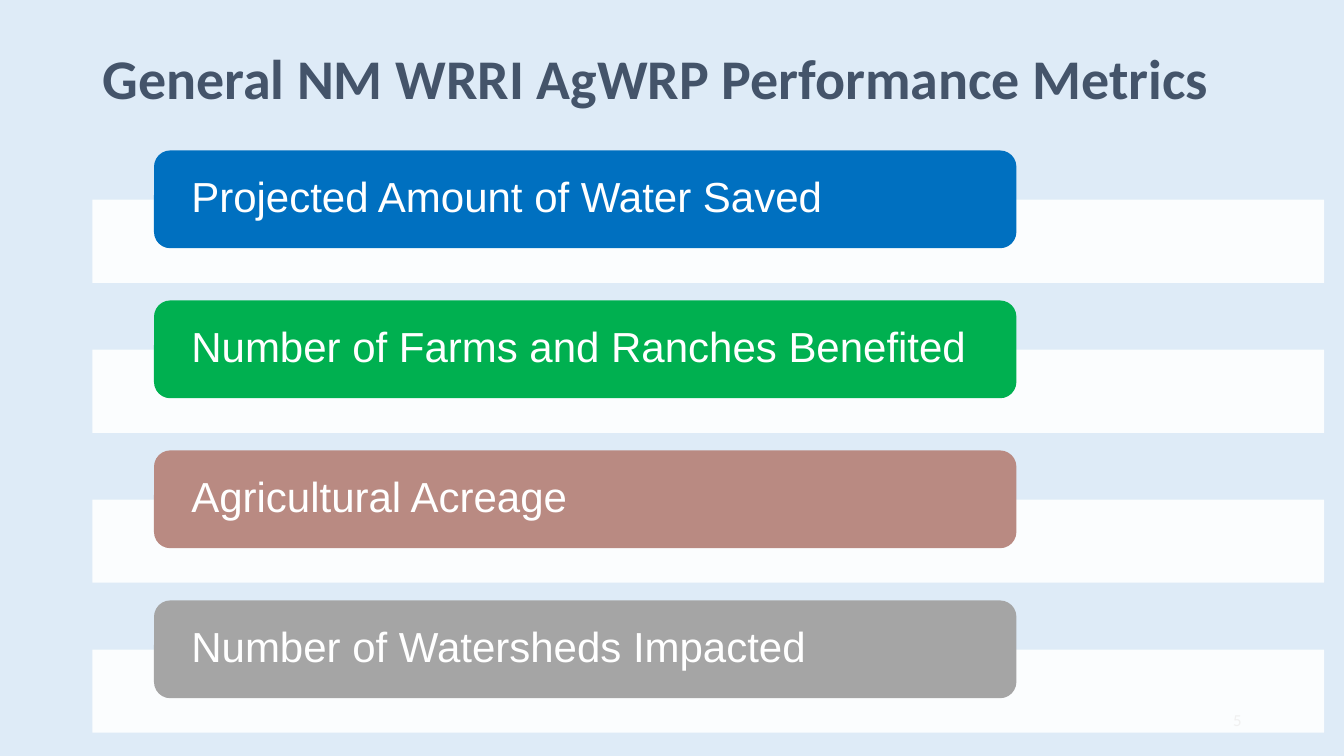
from dataclasses import dataclass

from lxml.etree import SubElement
from pptx import Presentation
from pptx.dml.color import RGBColor
from pptx.enum.shapes import MSO_SHAPE as Preset
from pptx.enum.text import MSO_ANCHOR as Anchor, PP_ALIGN as Align
from pptx.oxml.ns import qn
from pptx.util import Inches, Pt


@dataclass(frozen=True)
class Theme:
    backdrop: str = "DEEBF7"
    heading: str = "44546A"
    white: str = "FFFFFF"
    faint: str = "F0F0F0"
    heading_font: str = "Calibri"
    metric_font: str = "Arial"
    heading_size: int = 40
    metric_size: int = 30
    number_size: int = 12


class MetricsSlide:
    COLUMNS, ROWS = 133.33, 75

    def __init__(self, deck, theme):
        self.theme = theme
        self.column = deck.slide_width / self.COLUMNS
        self.row = deck.slide_height / self.ROWS
        self.slide = deck.slides.add_slide(deck.slide_layouts[6])
        backdrop = self.slide.background.fill
        backdrop.solid()
        backdrop.fore_color.rgb = RGBColor.from_string(theme.backdrop)

    def place(self, left, top, width, height):
        return (round(left * self.column), round(top * self.row),
                round(width * self.column), round(height * self.row))

    def set_words(self, holder, words, color, inset=1, align=Align.LEFT, **font_format):
        frame = holder.text_frame
        side = round(inset * self.column)
        frame_format = {"word_wrap": True, "vertical_anchor": Anchor.MIDDLE,
                        "margin_left": side, "margin_right": side,
                        "margin_top": 0, "margin_bottom": 0}
        for name, value in frame_format.items():
            setattr(frame, name, value)
        line = frame.paragraphs[0]
        line.text = words
        line.alignment = align
        line.line_spacing = 0.9
        for name, value in font_format.items():
            setattr(line.font, name, value)
        line.font.color.rgb = RGBColor.from_string(color)

    def label(self, words, box, color, **text_format):
        holder = self.slide.shapes.add_textbox(*self.place(*box))
        self.set_words(holder, words, color, **text_format)

    def block(self, preset, box, color, opacity=100):
        shape = self.slide.shapes.add_shape(preset, *self.place(*box))
        shape.shadow.inherit = False
        shape.line.fill.background()
        shape.fill.solid()
        shape.fill.fore_color.rgb = RGBColor.from_string(color)
        if opacity < 100:
            tint = next(shape.element.spPr.iter(qn("a:srgbClr")))
            SubElement(tint, qn("a:alpha"), val=str(opacity * 1000))
        return shape

    def metric(self, words, color, top):
        theme = self.theme
        self.block(Preset.RECTANGLE, (9.17, top + 4.87, 122.2, 8.26), theme.white, 90)
        pill = self.block(Preset.ROUNDED_RECTANGLE, (15.28, top, 85.55, 9.7), color)
        self.set_words(pill, words, theme.white, inset=3.23,
                       name=theme.metric_font, size=Pt(theme.metric_size))


def main():
    deck = Presentation()
    deck.slide_width, deck.slide_height = Inches(13.33), Inches(7.5)
    theme = Theme()
    page = MetricsSlide(deck, theme)
    page.label("General NM WRRI AgWRP Performance Metrics", (9.17, 3.7, 115, 8.8),
               theme.heading, name=theme.heading_font,
               size=Pt(theme.heading_size), bold=True)
    metrics = {
        "Projected Amount of Water Saved": "0070C0",
        "Number of Farms and Ranches Benefited": "00B050",
        "Agricultural Acreage": "B98A82",
        "Number of Watersheds Impacted": "A5A5A5",
    }
    first_top, pitch = 14.93, 14.88
    for index, (words, color) in enumerate(metrics.items()):
        page.metric(words, color, first_top + index * pitch)
    page.label("5", (94.17, 69.5, 30, 4), theme.faint, align=Align.RIGHT,
               name=theme.heading_font, size=Pt(theme.number_size))
    deck.save("out.pptx")


if __name__ == "__main__":
    main()
